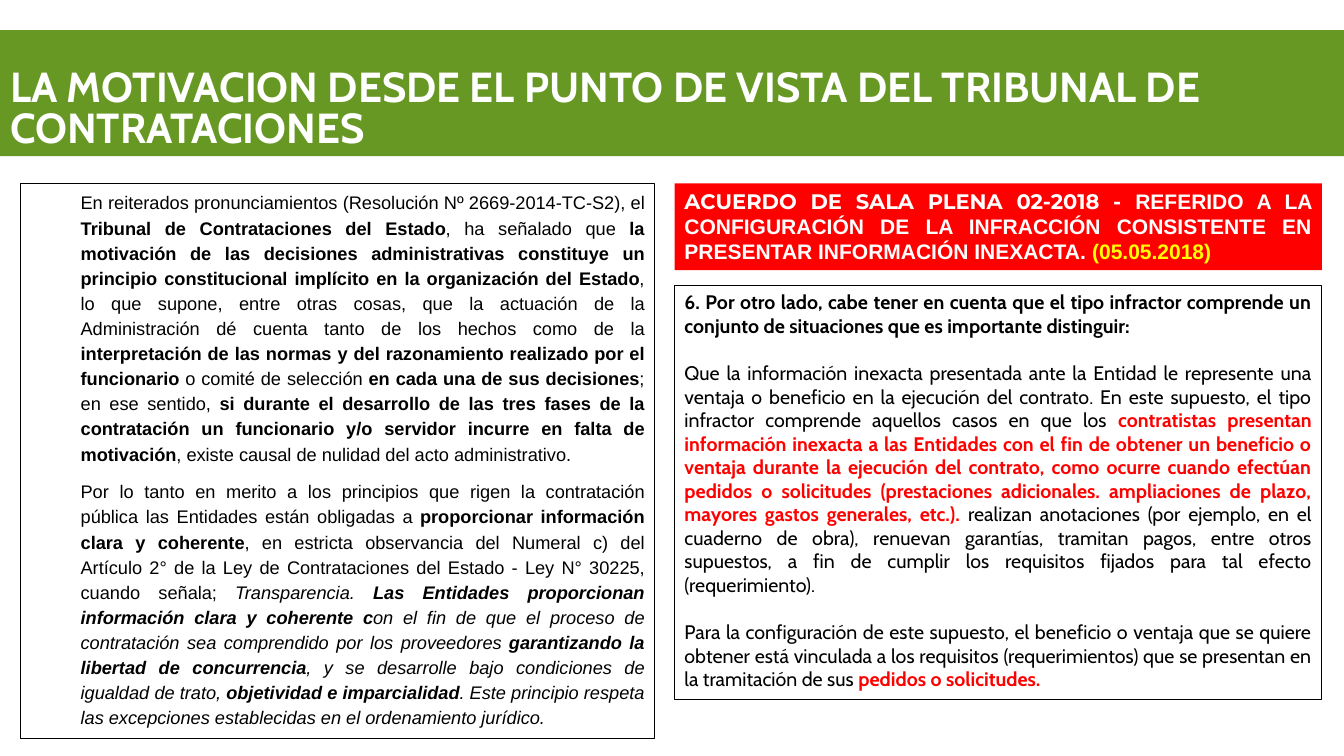
import pptx
import pptx.util
import pptx.dml.color
import pptx.enum.text

Inches, Pt = pptx.util.Inches, pptx.util.Pt
Align = pptx.enum.text.PP_ALIGN
Anchor = pptx.enum.text.MSO_ANCHOR
Fit = pptx.enum.text.MSO_AUTO_SIZE

# Theme: colours and type
theme = {
    "green": "689824", "red": "FF0000", "yellow": "FFFF00",
    "white": "FFFFFF", "black": "000000",
    "title": {"name": "Cabin", "size": Pt(30), "bold": True},
    "text": {"name": "Arial", "size": Pt(13), "bold": False},
    "strong": {"name": "Arial", "size": Pt(13), "bold": True},
    "slant": {"name": "Arial", "size": Pt(13), "bold": False, "italic": True},
    "stress": {"name": "Arial", "size": Pt(13), "bold": True, "italic": True},
    "code": {"name": "Montserrat", "size": Pt(15), "bold": True},
    "head": {"name": "Arial", "size": Pt(15), "bold": True},
    "note": {"name": "Cabin", "size": Pt(14), "bold": False},
    "key": {"name": "Cabin", "size": Pt(14), "bold": True},
}


def color(name):
    return pptx.dml.color.RGBColor.from_string(theme[name])


def write(par, runs, form):
    for key, val in form.items():
        setattr(par, key, val)
    for style, ink, text in runs:
        run = par.add_run()
        run.text = text
        for key, val in theme[style].items():
            setattr(run.font, key, val)
        run.font.color.rgb = color(ink)


deck = pptx.Presentation()
deck.slide_width, deck.slide_height = Inches(13.33), Inches(7.5)
slide = deck.slides.add_slide(deck.slide_layouts[5])

# Title band
title = slide.shapes.title
band = {"left": Inches(0), "top": Inches(0.3),
        "width": Inches(13.33), "height": Inches(1.25)}
for key, val in band.items():
    setattr(title, key, val)
title.fill.solid()
title.fill.fore_color.rgb = color("green")
frame = title.text_frame
frame.auto_size = Fit.NONE
frame.vertical_anchor = Anchor.BOTTOM
write(frame.paragraphs[0],
      [("title", "white", "LA MOTIVACION DESDE EL PUNTO DE VISTA DEL TRIBUNAL DE CONTRATACIONES")],
      {"alignment": Align.LEFT, "line_spacing": 0.8})

# Wording of the left panel
reasons = [
    [("text", "black", "En reiterados pronunciamientos (Resolución Nº 2669-2014-TC-S2), el "),
     ("strong", "black", "Tribunal de Contrataciones del Estado"),
     ("text", "black", ", ha señalado que "),
     ("strong", "black", "la motivación de las decisiones administrativas constituye un "
      "principio constitucional implícito en la organización del Estado"),
     ("text", "black", ", lo que supone, entre otras cosas, que la actuación de la "
      "Administración dé cuenta tanto de los hechos como de la "),
     ("strong", "black", "interpretación de las normas y del razonamiento realizado por el funcionario"),
     ("text", "black", " o comité de selección "),
     ("strong", "black", "en cada una de sus decisiones"),
     ("text", "black", "; en ese sentido, "),
     ("strong", "black", "si durante el desarrollo de las tres fases de la contratación un "
      "funcionario y/o servidor incurre en falta de motivación"),
     ("text", "black", ", existe causal de nulidad del acto administrativo.")],
    [("text", "black", "Por lo tanto en merito a los principios que rigen la contratación "
      "pública las Entidades están obligadas a "),
     ("strong", "black", "proporcionar información clara y coherente"),
     ("text", "black", ", en estricta observancia del Numeral c) del Artículo 2° de la Ley de "
      "Contrataciones del Estado - Ley N° 30225, cuando señala; "),
     ("slant", "black", "Transparencia. "),
     ("stress", "black", "Las Entidades proporcionan información clara y coherente c"),
     ("slant", "black", "on el fin de que el proceso de contratación sea comprendido por los proveedores "),
     ("stress", "black", "garantizando la libertad de concurrencia"),
     ("slant", "black", ", y se desarrolle bajo condiciones de igualdad de trato, "),
     ("stress", "black", "objetividad e imparcialidad"),
     ("slant", "black", ". Este principio respeta las excepciones establecidas en el "
      "ordenamiento jurídico.")],
]

# Wording of the red heading
accord = [
    [("code", "white", "ACUERDO DE SALA PLENA 02-2018 - "),
     ("head", "white", "REFERIDO A LA CONFIGURACIÓN DE LA INFRACCIÓN CONSISTENTE EN "
      "PRESENTAR INFORMACIÓN INEXACTA. "),
     ("head", "yellow", "(05.05.2018)")],
]

# Wording of the right panel
cases = [
    [("key", "black", "6. Por otro lado, cabe tener en cuenta que el tipo infractor comprende un "
      "conjunto de situaciones que es importante distinguir:")],
    [("note", "black", "Que la información inexacta presentada ante la Entidad le represente una "
      "ventaja o beneficio en la ejecución del contrato. En este supuesto, el tipo infractor "
      "comprende aquellos casos en que los "),
     ("key", "red", "contratistas presentan información inexacta a las Entidades con el fin de "
      "obtener un beneficio o ventaja durante la ejecución del contrato, como ocurre cuando "
      "efectúan pedidos o solicitudes (prestaciones adicionales. ampliaciones de plazo, mayores "
      "gastos generales, etc.). "),
     ("note", "black", "realizan anotaciones (por ejemplo, en el cuaderno de obra), renuevan "
      "garantías, tramitan pagos, entre otros supuestos, a fin de cumplir los requisitos fijados "
      "para tal efecto (requerimiento).")],
    [("note", "black", "Para la configuración de este supuesto, el beneficio o ventaja que se "
      "quiere obtener está vinculada a los requisitos (requerimientos) que se presentan en la "
      "tramitación de sus "),
     ("key", "red", "pedidos o solicitudes.")],
]

# Panels: place, fill, left inset, line spacing, paragraph gap, wording
panels = [
    ((0.2, 1.82, 6.29, 5.51), None, 0.6, 1.15, 9, reasons),
    ((6.69, 1.82, 6.42, 0.86), "red", 0.1, 1.0, 0, accord),
    ((6.69, 2.83, 6.42, 4.11), None, 0.1, 1.0, 17, cases),
]
for place, fill, inset, pitch, gap, words in panels:
    box = slide.shapes.add_textbox(*[Inches(n) for n in place])
    if fill:
        box.fill.solid()
        box.fill.fore_color.rgb = color(fill)
    else:
        box.line.color.rgb = color("black")
        box.line.width = Pt(0.75)
    frame = box.text_frame
    form = {"word_wrap": True, "auto_size": Fit.NONE, "margin_left": Inches(inset)}
    for key, val in form.items():
        setattr(frame, key, val)
    for num, runs in enumerate(words):
        par = frame.add_paragraph() if num else frame.paragraphs[0]
        write(par, runs, {"alignment": Align.JUSTIFY, "line_spacing": pitch,
                          "space_before": Pt(gap if num else 0)})

deck.save("out.pptx")
